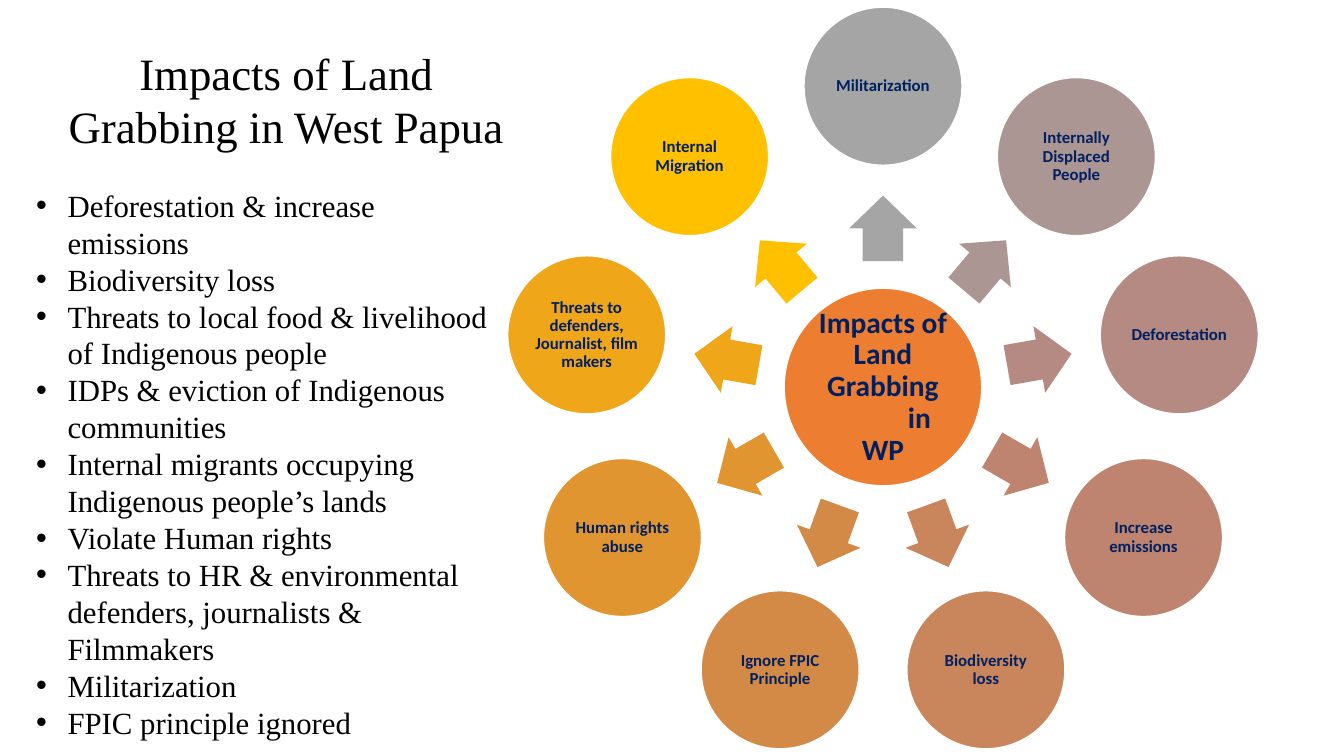
"""Build a slide on the impacts of land grabbing in West Papua."""
import math
from dataclasses import dataclass

import pptx
import pptx.dml.color
import pptx.enum.shapes
import pptx.enum.text
import pptx.oxml
import pptx.oxml.ns
import pptx.util

Pt = pptx.util.Pt
Shapes = pptx.enum.shapes.MSO_SHAPE
Align = pptx.enum.text.PP_ALIGN

HUB_X, HUB_Y = 630.72, 276.48
HUB_SIZE, IMPACT_SIZE = 141.12, 112.9
IMPACT_RADIUS, ARROW_RADIUS = 214.9, 113.4
ARROW_WIDTH, ARROW_HEIGHT = 46.8, 48.24
BULLET_INDENT = 22.5
SERIF, SANS = "Times New Roman", "Calibri"
BLACK, NAVY, WHITE, ORANGE = "000000", "002060", "FFFFFF", "ED7D31"


@dataclass
class Impact:
    label: str
    fill: str


@dataclass
class Line:
    text: str
    indent: float = 0


IMPACTS = [
    Impact("Militarization", "A5A5A5"),
    Impact("Internally Displaced People", "AC9694"),
    Impact("Deforestation", "B48A82"),
    Impact("Increase emissions", "BE8470"),
    Impact("Biodiversity loss", "C9865C"),
    Impact("Ignore FPIC Principle", "D48A47"),
    Impact("Human rights abuse", "E19530"),
    Impact("Threats to defenders, Journalist, film makers", "F0A619"),
    Impact("Internal Migration", "FFC000"),
]
HUB_LINES = [Line("Impacts of Land Grabbing"), Line("in", 52), Line("WP")]
BULLETS = [
    "Deforestation & increase emissions",
    "Biodiversity loss",
    "Threats to local food & livelihood of Indigenous people",
    "IDPs & eviction of Indigenous communities",
    "Internal migrants occupying Indigenous people’s lands",
    "Violate Human rights",
    "Threats to HR & environmental defenders, journalists & Filmmakers",
    "Militarization",
    "FPIC principle ignored",
]


def colour(value: str) -> pptx.dml.color.RGBColor:
    """Turn a hex string into a colour."""
    return pptx.dml.color.RGBColor.from_string(value)


def style(paragraph, name: str, size: float, ink: str, bold: bool = False) -> None:
    """Set the font of a whole paragraph."""
    font = paragraph.font
    font.name, font.size, font.bold = name, Pt(size), bold
    font.color.rgb = colour(ink)


def add_centred(page, kind, x: float, y: float, width: float, height: float, fill: str):
    """Add a filled shape around a centre point."""
    shape = page.shapes.add_shape(
        kind, Pt(x - width / 2), Pt(y - height / 2), Pt(width), Pt(height))
    shape.shadow.inherit = False
    shape.fill.solid()
    shape.fill.fore_color.rgb = colour(fill)
    shape.line.fill.background()
    return shape


def add_circle(page, x: float, y: float, diameter: float, fill: str,
               lines: list[Line], size: float, inset: float) -> None:
    """Add a white-edged circle with centred bold text."""
    circle = add_centred(page, Shapes.OVAL, x, y, diameter, diameter, fill)
    circle.line.color.rgb = colour(WHITE)
    circle.line.width = Pt(1)
    frame = circle.text_frame
    frame.word_wrap = True
    frame.vertical_anchor = pptx.enum.text.MSO_ANCHOR.MIDDLE
    frame.margin_left = frame.margin_right = Pt(inset)
    frame.margin_top = frame.margin_bottom = Pt(inset)
    for index, line in enumerate(lines):
        paragraph = frame.add_paragraph() if index else frame.paragraphs[0]
        paragraph.text = line.text
        paragraph.alignment = Align.CENTER
        paragraph.line_spacing = 0.9
        if line.indent:
            paragraph._p.get_or_add_pPr().set("marL", str(Pt(line.indent)))
        style(paragraph, SANS, size, NAVY, True)


def add_impact(page, impact: Impact, angle: float) -> None:
    """Add one impact circle and the arrow that leads to it."""
    across, down = math.cos(math.radians(angle)), math.sin(math.radians(angle))
    arrow = add_centred(page, Shapes.RIGHT_ARROW, HUB_X + ARROW_RADIUS * across,
                        HUB_Y + ARROW_RADIUS * down, ARROW_WIDTH, ARROW_HEIGHT, impact.fill)
    arrow.adjustments[0], arrow.adjustments[1] = 0.6, 0.5
    arrow.rotation = angle % 360
    add_circle(page, HUB_X + IMPACT_RADIUS * across, HUB_Y + IMPACT_RADIUS * down,
               IMPACT_SIZE, impact.fill, [Line(impact.label)], 12, 1.2)


def add_bullet(paragraph) -> None:
    """Give a paragraph a hanging round bullet."""
    properties = paragraph._p.get_or_add_pPr()
    properties.set("marL", str(Pt(BULLET_INDENT)))
    properties.set("indent", str(Pt(-BULLET_INDENT)))
    namespace = pptx.oxml.ns.nsdecls("a")
    for tag in ('buFont typeface="Arial"', 'buChar char="•"'):
        properties.append(pptx.oxml.parse_xml(f"<a:{tag} {namespace}/>"))


def add_text(page, left: float, top: float, width: float, height: float,
             texts: list[str], size: float, bulleted: bool) -> None:
    """Add a serif text box, either bulleted or centred."""
    box = page.shapes.add_textbox(Pt(left), Pt(top), Pt(width), Pt(height))
    frame = box.text_frame
    frame.word_wrap = True
    frame.auto_size = pptx.enum.text.MSO_AUTO_SIZE.SHAPE_TO_FIT_TEXT
    for index, text in enumerate(texts):
        paragraph = frame.add_paragraph() if index else frame.paragraphs[0]
        paragraph.text = text
        if bulleted:
            add_bullet(paragraph)
        else:
            paragraph.alignment = Align.CENTER
        style(paragraph, SERIF, size, BLACK)


def main() -> None:
    """Build and save the deck."""
    deck = pptx.Presentation()
    deck.slide_width, deck.slide_height = Pt(960), Pt(540)
    page = deck.slides.add_slide(deck.slide_layouts[6])
    add_circle(page, HUB_X, HUB_Y, HUB_SIZE, ORANGE, HUB_LINES, 21, 2.1)
    for index, impact in enumerate(IMPACTS):
        add_impact(page, impact, 270 + index * 360 / len(IMPACTS))
    add_text(page, 36.72, 28.8, 335.52, 84.96,
             ["Impacts of Land Grabbing in West Papua"], 32, False)
    add_text(page, 18.72, 129.6, 340.56, 406.8, BULLETS, 22, True)
    deck.save("out.pptx")


if __name__ == "__main__":
    main()
